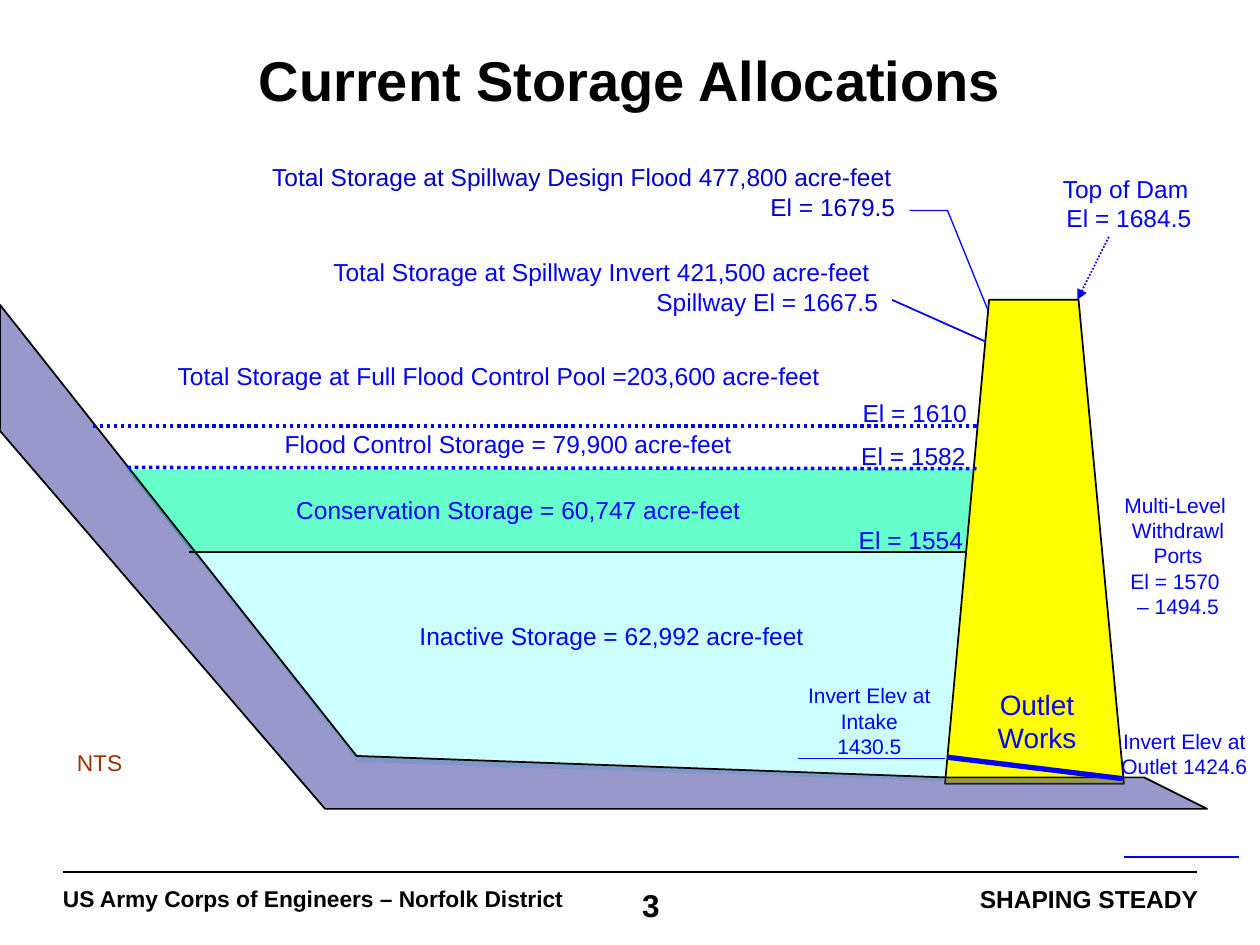
"""Build the reservoir storage allocation slide."""
from dataclasses import dataclass

import pptx
import pptx.dml.color
import pptx.enum.dml
import pptx.enum.shapes
import pptx.enum.text
import pptx.oxml
import pptx.oxml.ns
import pptx.util

Inches = pptx.util.Inches
Align = pptx.enum.text.PP_ALIGN
Anchor = pptx.enum.text.MSO_ANCHOR
DOTTED = pptx.enum.dml.MSO_LINE.ROUND_DOT
BLACK, BLUE, WATER_BLUE = "000000", "0000FF", "0000CC"


@dataclass
class Label:
    text: str
    left: float
    top: float
    width: float
    height: float
    size: float = 14
    color: str = BLUE
    bold: bool = False
    align: Align = Align.CENTER
    anchor: Anchor = Anchor.MIDDLE
    wrap: bool = True
    inset: bool = True


@dataclass
class Outline:
    points: list
    fill: str = ""
    line: str = ""
    weight: float = 1
    opacity: int = 100


@dataclass
class Line:
    start: tuple
    end: tuple
    color: str = BLUE
    weight: float = 1
    dotted: bool = False
    arrow: bool = False


OUTLINES = [
    Outline([(7.49, 6.2), (7.66, 4.38), (1.53, 4.39), (2.84, 6.05)], "CCFFFF"),
    Outline([(7.69, 4.38), (7.75, 3.72), (1.01, 3.73), (1.52, 4.38)], "66FFCC"),
    Outline([(7.5, 6.22), (7.85, 2.38), (8.56, 2.38), (8.92, 6.22)], "FFFF00", BLACK),
    Outline([(9.08, 6.17), (7.5, 6.17), (2.83, 6), (0, 2.42), (0, 3.42),
             (2.58, 6.42), (9.58, 6.42)], "333399", BLACK, opacity=50),
    Outline([(7.22, 1.67), (7.52, 1.67), (7.84, 2.46)], line=BLUE, weight=0.75),
]

LINES = [
    Line((9.5, 6.92), (0.5, 6.92), BLACK, 0.75),
    Line((7.75, 3.72), (1, 3.71), weight=2, dotted=True),
    Line((7.75, 3.38), (0.74, 3.38), weight=2, dotted=True),
    Line((1.5, 4.38), (7.67, 4.38), BLACK, 0.75),
    Line((7.08, 2.38), (7.82, 2.71)),
    Line((8.8, 1.88), (8.55, 2.38), dotted=True, arrow=True),
    Line((7.52, 6.01), (8.91, 6.18), weight=3),
    Line((6.33, 6.02), (7.5, 6.02)),
    Line((8.92, 6.8), (9.83, 6.8)),
]

LABELS = [
    Label("US Army Corps of Engineers – Norfolk District", 0.5, 7.02, 4.33, 0.22, 13,
          BLACK, True, Align.LEFT, Anchor.TOP, inset=False),
    Label("SHAPING STEADY", 6.75, 7.02, 2.76, 0.23, 14, BLACK, True,
          Align.RIGHT, Anchor.TOP, inset=False),
    Label("Current Storage Allocations", 0.5, 0, 9, 1.25, 32, BLACK, True),
    Label("3", 4, 6.98, 2.33, 0.52, 18, BLACK, True, anchor=Anchor.TOP),
    Label("Inactive Storage = 62,992 acre-feet", 3.17, 4.88, 3.37, 0.33, wrap=False),
    Label("Flood Control Storage = 79,900 acre-feet", 1.67, 3.36, 4.73, 0.33),
    Label("Conservation Storage = 60,747 acre-feet", 1.75, 3.88, 4.73, 0.33),
    Label("Total Storage at Full Flood Control Pool =203,600 acre-feet",
          0.67, 2.82, 6.58, 0.33),
    Label("Total Storage at Spillway Invert 421,500 acre-feet",
          2.43, 1.99, 4.69, 0.33, anchor=Anchor.TOP, wrap=False),
    Label("Spillway El = 1667.5", 5.05, 2.23, 2.08, 0.33, wrap=False),
    Label("El = 1610", 6.74, 3.11, 1.04, 0.33, wrap=False),
    Label("El = 1582", 6.73, 3.45, 1.04, 0.33, wrap=False),
    Label("El = 1554", 6.52, 4.12, 1.42, 0.33),
    Label("Top of Dam \nEl = 1684.5", 8.3, 1.33, 1.32, 0.57, wrap=False),
    Label("NTS", 0.44, 5.85, 0.7, 0.4, 13, "993300", wrap=False),
    Label("Invert Elev at Intake 1430.5", 6.3, 5.37, 1.2, 0.7, 12),
    Label("Outlet\nWorks", 7.79, 5.4, 0.88, 0.64, 16, wrap=False),
    Label("Invert Elev at Outlet 1424.6", 8.8, 5.63, 1.2, 0.7, 12),
    Label("Multi-Level \nWithdrawl\nPorts\nEl = 1570 \n– 1494.5",
          8.82, 3.86, 1.06, 1.11, 12, anchor=Anchor.TOP, wrap=False),
]
DESIGN_FLOOD = Label("Total Storage at Spillway Design Flood 477,800 acre-feet\nEl = 1679.5",
                     1.58, 1.24, 6.08, 0.57, color=WATER_BLUE, anchor=Anchor.TOP)


def paint(fill, value: str) -> None:
    """Make a fill solid in a hex colour."""
    fill.solid()
    fill.fore_color.rgb = pptx.dml.color.RGBColor.from_string(value)


def add_element(parent, tag: str, **attributes: str) -> None:
    """Append a drawing element with the given attributes."""
    element = pptx.oxml.parse_xml(f"<{tag} {pptx.oxml.ns.nsdecls('a')}/>")
    for name, value in attributes.items():
        element.set(name, value)
    parent.append(element)


def draw_label(page, label: Label):
    """Draw a text box and return its text frame."""
    box = page.shapes.add_textbox(Inches(label.left), Inches(label.top),
                                  Inches(label.width), Inches(label.height))
    frame = box.text_frame
    frame.word_wrap = label.wrap
    frame.vertical_anchor = label.anchor
    if not label.inset:
        frame.margin_left = frame.margin_right = 0
        frame.margin_top = frame.margin_bottom = 0
    frame.text = label.text
    for para in frame.paragraphs:
        para.alignment = label.align
        para.font.name = "Arial"
        para.font.size = pptx.util.Pt(label.size)
        para.font.bold = label.bold
        paint(para.font.fill, label.color)
    return frame


def draw_outline(page, outline: Outline) -> None:
    """Draw a filled polygon, or an open path when it has no fill."""
    points = [(Inches(x), Inches(y)) for x, y in outline.points]
    builder = page.shapes.build_freeform(*points[0])
    builder.add_line_segments(points[1:], close=bool(outline.fill))
    shape = builder.convert_to_shape()
    shape.shadow.inherit = False
    if outline.fill:
        paint(shape.fill, outline.fill)
    else:
        shape.fill.background()
    if outline.opacity < 100:
        color = shape._element.spPr.find(".//" + pptx.oxml.ns.qn("a:srgbClr"))
        add_element(color, "a:alpha", val=str(outline.opacity * 1000))
    if outline.line:
        paint(shape.line.fill, outline.line)
        shape.line.width = pptx.util.Pt(outline.weight)
    else:
        shape.line.fill.background()


def draw_line(page, line: Line) -> None:
    """Draw a straight line, dotted or with an arrowhead if asked."""
    ends = [Inches(value) for value in line.start + line.end]
    connector = page.shapes.add_connector(pptx.enum.shapes.MSO_CONNECTOR.STRAIGHT, *ends)
    paint(connector.line.fill, line.color)
    connector.line.width = pptx.util.Pt(line.weight)
    if line.dotted:
        connector.line.dash_style = DOTTED
    if line.arrow:
        add_element(connector.line._get_or_add_ln(), "a:tailEnd", type="triangle")
    add_element(connector._element.spPr, "a:effectLst")


def main() -> None:
    """Build and save the slide."""
    deck = pptx.Presentation()
    deck.slide_width, deck.slide_height = Inches(10), Inches(7.5)
    page = deck.slides.add_slide(deck.slide_layouts[6])
    for outline in OUTLINES:
        draw_outline(page, outline)
    for line in LINES:
        draw_line(page, line)
    for label in LABELS:
        draw_label(page, label)
    elevation = draw_label(page, DESIGN_FLOOD).paragraphs[1]
    elevation._p.get_or_add_pPr().set("marL", str(Inches(3.98)))
    deck.save("out.pptx")


if __name__ == "__main__":
    main()
